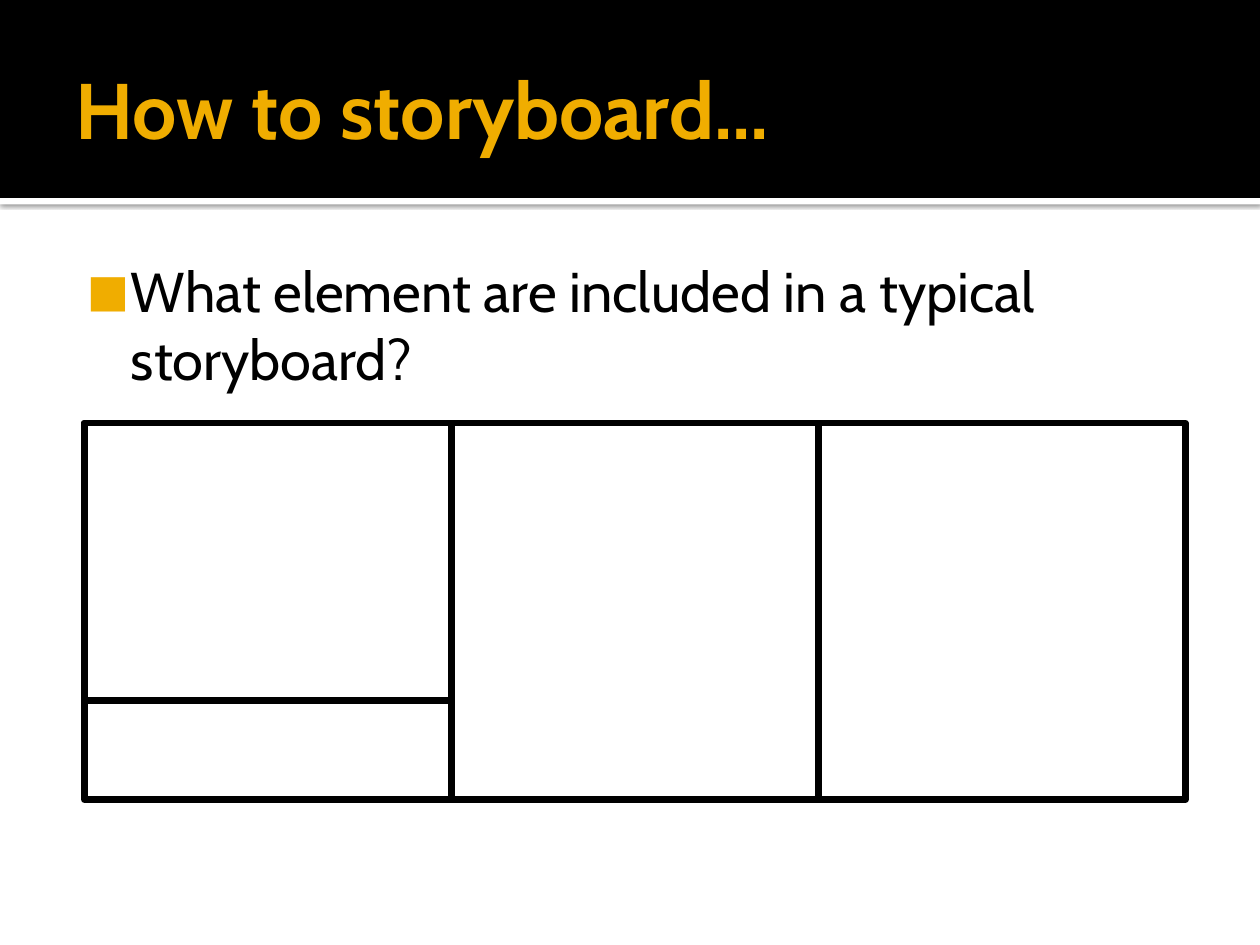
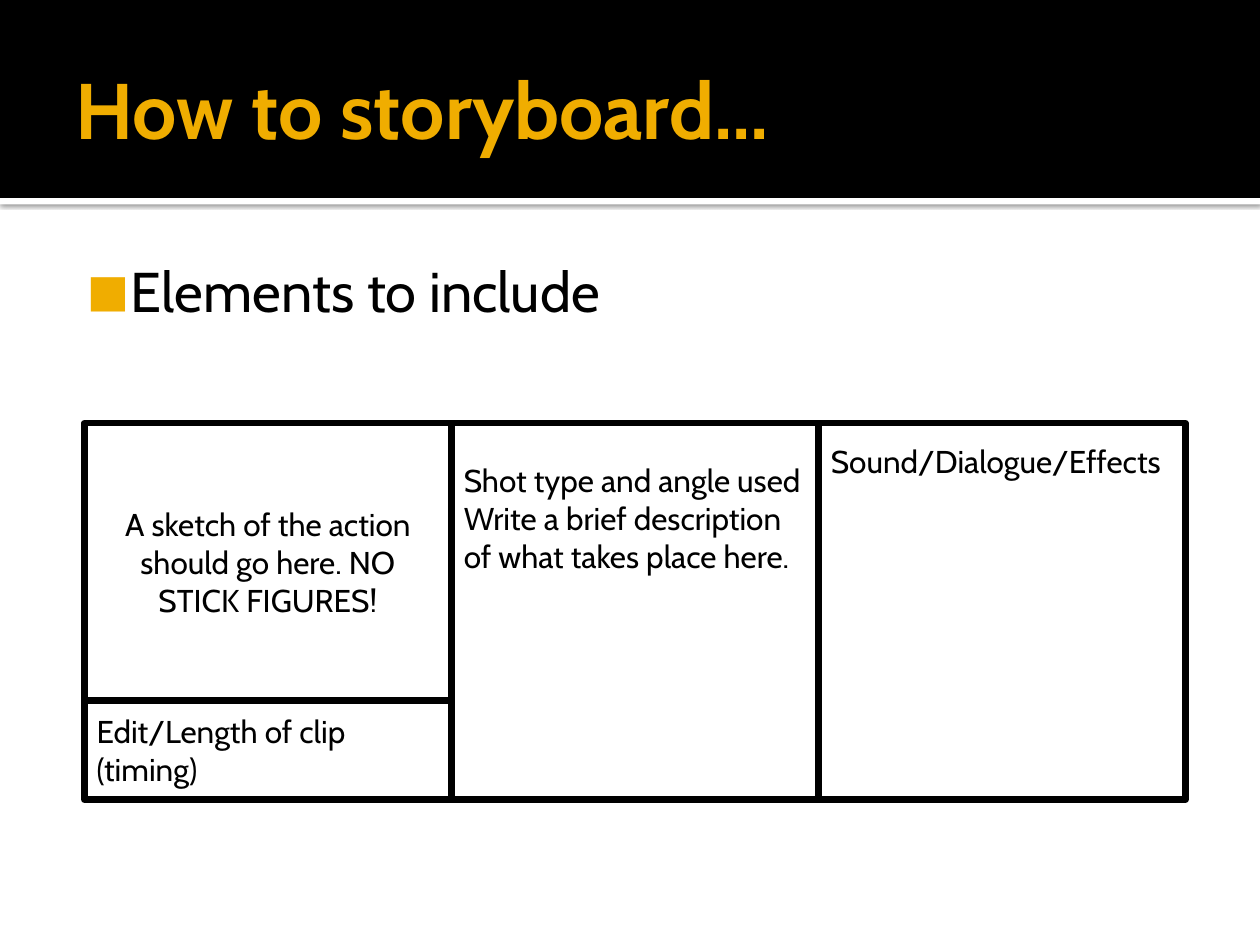
from lxml.etree import SubElement, fromstring
from pptx import Presentation
from pptx.dml.color import RGBColor
from pptx.enum.shapes import MSO_SHAPE
from pptx.enum.text import MSO_ANCHOR, MSO_AUTO_SIZE, PP_ALIGN
from pptx.oxml.ns import nsdecls, qn
from pptx.util import Cm, Pt

THEME = {
    "gold": RGBColor(0xF0, 0xAD, 0x00),
    "black": RGBColor(0, 0, 0),
    "white": RGBColor(255, 255, 255),
    "font": "Cabin",
    "title": Pt(45),
    "body": Pt(32),
    "note": Pt(18),
    "rule": Pt(3.78),
}


def put_text(shape, text, size, color, bold=False, align=PP_ALIGN.LEFT, **frame):
    """Write one paragraph; frame holds text frame settings."""
    box = shape.text_frame
    settings = {"word_wrap": True, "auto_size": MSO_AUTO_SIZE.NONE, **frame}
    for key, value in settings.items():
        setattr(box, key, value)
    para = box.paragraphs[0]
    para.text = text
    para.alignment = align
    para.space_before = Pt(0)
    look = {"name": THEME["font"], "size": THEME[size], "bold": bold}
    for run in para.runs:
        for key, value in look.items():
            setattr(run.font, key, value)
        run.font.color.rgb = THEME[color]
    return para


def add_rect(slide, place, fill, rule=False):
    shape = slide.shapes.add_shape(MSO_SHAPE.RECTANGLE, *map(Cm, place))
    shape.shadow.inherit = False
    shape.fill.solid()
    shape.fill.fore_color.rgb = THEME[fill]
    if rule:
        shape.line.color.rgb = THEME["black"]
        shape.line.width = THEME["rule"]
    else:
        shape.line.fill.background()
    return shape


deck = Presentation()
deck.slide_width, deck.slide_height = Cm(25.4), Cm(19.05)
layout = deck.slide_layouts[1]

# Storyboard grid: three equal columns, the first one split in two
left, top, width, height = 1.7, 8.53, 7.4, 7.59
split = 5.59
cols = [left + i * width for i in range(3)]
sketch = (cols[0], top, width, split)
timing = (cols[0], top + split, width, height - split)
full = [(col, top, width, height) for col in cols]

# Each panel: place, text, text settings
pages = [
    ("What element are included in a typical storyboard?",
     [(place, "", {}) for place in [*full, sketch]]),
    ("Elements to include", [
        (timing, "Edit/Length of clip (timing)",
         {"vertical_anchor": MSO_ANCHOR.MIDDLE}),
        (full[1], "Shot type and angle used\n"
                  "Write a brief description of what takes place here.",
         {"vertical_anchor": MSO_ANCHOR.TOP, "margin_top": Cm(0.77)}),
        (full[2], "Sound/Dialogue/Effects",
         {"vertical_anchor": MSO_ANCHOR.TOP, "margin_top": Cm(0.38)}),
        (sketch, "A sketch of the action should go here. NO STICK FIGURES!",
         {"vertical_anchor": MSO_ANCHOR.MIDDLE, "align": PP_ALIGN.CENTER}),
    ]),
]

slides = [deck.slides.add_slide(layout) for _ in pages]

# Header bands are drawn once and moved to the shared layout
strip = add_rect(slides[0], (0, 3.99, 25.4, 0.13), "white")
band = add_rect(slides[0], (0, 0, 25.4, 3.99), "black")
effects = strip._element.spPr.find(qn("a:effectLst"))
effects.append(fromstring(
    f'<a:outerShdw {nsdecls("a")} blurRad="{Pt(2.5)}" dist="{Pt(0.8)}" '
    'dir="5400000" algn="t" rotWithShape="0"><a:srgbClr val="000000">'
    '<a:alpha val="60000"/></a:srgbClr></a:outerShdw>'))
for spot, shape in enumerate((strip, band), 2):
    layout.shapes._spTree.insert(spot, shape._element)

for slide, (point, panels) in zip(slides, pages):
    title, body = slide.shapes.title, slide.placeholders[1]
    spots = [(title, (1.27, 0.43, 22.86, 3.48)),
             (body, (1.27, 4.93, 22.86, 12.85))]
    for holder, place in spots:
        for key, value in zip(("left", "top", "width", "height"), place):
            setattr(holder, key, Cm(value))

    put_text(title, "How to storyboard...", "title", "gold", bold=True,
             vertical_anchor=MSO_ANCHOR.MIDDLE, margin_left=Cm(0.25),
             margin_right=Cm(0.13), margin_top=Cm(0.13), margin_bottom=Cm(0.13))
    para = put_text(body, point, "body", "black",
                    vertical_anchor=MSO_ANCHOR.TOP, margin_left=Cm(0.15),
                    margin_right=Cm(0.25), margin_top=Cm(0.25),
                    margin_bottom=Cm(0.13))
    props = para._p.get_or_add_pPr()
    props.set("marL", str(Cm(1.22)))
    props.set("indent", str(Cm(-0.89)))
    tint = SubElement(props, qn("a:buClr"))
    SubElement(tint, qn("a:srgbClr"), val=str(THEME["gold"]))
    SubElement(props, qn("a:buSzPct"), val="80000")
    SubElement(props, qn("a:buFont"), typeface=THEME["font"])
    SubElement(props, qn("a:buChar"), char="■")

    for place, text, style in panels:
        panel = add_rect(slide, place, "white", rule=True)
        if text:
            put_text(panel, text, "note", "black", **style)

deck.save("out.pptx")
